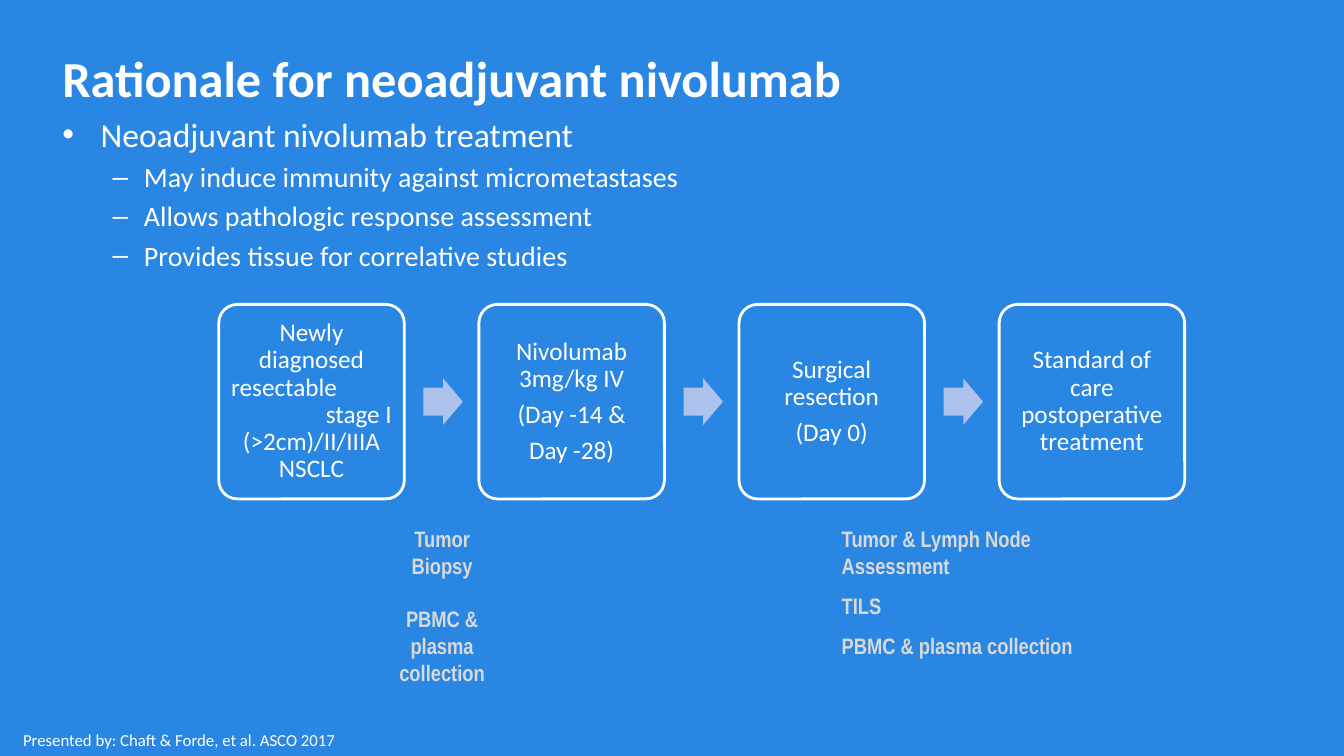
import pptx
import pptx.util
import pptx.dml.color
import pptx.enum.shapes
import pptx.enum.text
import pptx.oxml.ns
import lxml.etree

Inches = pptx.util.Inches
Pt = pptx.util.Pt
Align = pptx.enum.text.PP_ALIGN
Anchor = pptx.enum.text.MSO_ANCHOR
Kind = pptx.enum.shapes.MSO_SHAPE

HUES = {"blue": "2986E2", "white": "FFFFFF", "pale": "ADC3EE", "gray": "D9D9D9"}

LEFT = {"alignment": Align.LEFT}
MID = {"alignment": Align.CENTER}
STEP = {"alignment": Align.CENTER, "line_spacing": 0.9, "space_after": Pt(6.3)}
TIGHT = {**STEP, "space_after": Pt(0)}

HEAD = {"name": "Calibri", "size": Pt(36), "bold": True}
MAIN = {"name": "Calibri", "size": Pt(24)}
SUB = {"name": "Calibri", "size": Pt(20)}
CELL = {"name": "Calibri", "size": Pt(18)}
FOOT = {"name": "Calibri", "size": Pt(12)}
NOTE = {"name": "Arial Narrow", "size": Pt(16), "bold": True}

PLAIN = (0.1, 0.05)
SNUG = (0.07, 0.07)

TITLE = [("Rationale for neoadjuvant nivolumab", LEFT)]
POINTS = [
    ("Neoadjuvant nivolumab treatment", 0),
    ("May induce immunity against micrometastases", 1),
    ("Allows pathologic response assessment", 1),
    ("Provides tissue for correlative studies", 1),
]
LEVELS = [
    {"font": MAIN, "mark": "•", "indent": (0.38, -0.38), "gap": 0},
    {"font": SUB, "mark": "–", "indent": (0.81, -0.31), "gap": 4},
]
STEPS = [
    [
        ("Newly diagnosed", TIGHT),
        ("resectable", {**TIGHT, "alignment": Align.LEFT}),
        ("stage I", {**TIGHT, "alignment": Align.RIGHT}),
        ("(>2cm)/II/IIIA NSCLC", STEP),
    ],
    [("Nivolumab 3mg/kg IV", STEP), ("(Day -14 &", STEP), ("Day -28)", STEP)],
    [("Surgical resection", STEP), ("(Day 0)", STEP)],
    [("Standard of care postoperative treatment", STEP)],
]
NOTES = [
    (
        (3.68, 5.16, 1.41, 1.72),
        [
            ("Tumor\vBiopsy", MID),
            ("PBMC & plasma collection", {**MID, "space_before": Pt(19)}),
        ],
    ),
    (
        (8.25, 5.16, 2.5, 1.45),
        [
            ("Tumor & Lymph Node Assessment", LEFT),
            ("TILS", {**LEFT, "space_before": Pt(9.6)}),
            ("PBMC & plasma collection", {**LEFT, "space_before": Pt(9.6)}),
        ],
    ),
]
SOURCE = [("Presented by: Chaft & Forde, et al. ASCO 2017", LEFT)]

ROW = {"left": 2.17, "top": 3.02, "wide": 1.84, "high": 1.93, "pitch": 2.58}
ARROW = {"wide": 0.39, "high": 0.46, "gap": 0.19}


def tint(name):
    return pptx.dml.color.RGBColor.from_string(HUES[name])


def apply(item, style):
    for key, value in style.items():
        setattr(item, key, value)


def write(shape, lines, font, hue="white", pad=PLAIN, anchor=Anchor.TOP):
    frame = shape.text_frame
    side, edge = map(Inches, pad)
    apply(frame, {
        "word_wrap": True, "vertical_anchor": anchor,
        "margin_left": side, "margin_right": side,
        "margin_top": edge, "margin_bottom": edge,
    })
    for i, (text, style) in enumerate(lines):
        para = frame.add_paragraph() if i else frame.paragraphs[0]
        para.text = text
        apply(para, style)
        for run in para.runs:
            apply(run.font, font)
            run.font.color.rgb = tint(hue)
    return frame


def label(slide, place, lines, font, **more):
    box = slide.shapes.add_textbox(*map(Inches, place))
    return write(box, lines, font, **more)


def block(slide, kind, place, fill, bends):
    shape = slide.shapes.add_shape(kind, *map(Inches, place))
    shape.shadow.inherit = False
    shape.fill.solid()
    shape.fill.fore_color.rgb = tint(fill)
    for i, bend in enumerate(bends):
        shape.adjustments[i] = bend
    return shape


def bullet(para, level):
    props = para._p.get_or_add_pPr()
    for key, value in zip(("marL", "indent"), level["indent"]):
        props.set(key, str(Inches(value)))
    face = lxml.etree.SubElement(props, pptx.oxml.ns.qn("a:buFont"))
    face.set("typeface", "Arial")
    mark = lxml.etree.SubElement(props, pptx.oxml.ns.qn("a:buChar"))
    mark.set("char", level["mark"])
    para.space_before = Pt(level["gap"])
    for run in para.runs:
        apply(run.font, level["font"])


def flow(slide):
    for i, lines in enumerate(STEPS):
        left = ROW["left"] + i * ROW["pitch"]
        place = (left, ROW["top"], ROW["wide"], ROW["high"])
        box = block(slide, Kind.ROUNDED_RECTANGLE, place, "blue", [0.1])
        box.line.color.rgb = tint("white")
        box.line.width = Pt(2)
        write(box, lines, CELL, pad=SNUG, anchor=Anchor.MIDDLE)
        if i < len(STEPS) - 1:
            x = left + ROW["wide"] + ARROW["gap"]
            y = ROW["top"] + (ROW["high"] - ARROW["high"]) / 2
            place = (x, y, ARROW["wide"], ARROW["high"])
            arrow = block(slide, Kind.RIGHT_ARROW, place, "pale", [0.6, 0.5])
            arrow.line.fill.background()


def main():
    deck = pptx.Presentation()
    deck.slide_width = Inches(13.33)
    deck.slide_height = Inches(7.5)
    slide = deck.slides.add_slide(deck.slide_layouts[6])
    slide.background.fill.solid()
    slide.background.fill.fore_color.rgb = tint("blue")

    label(slide, (0.52, 0.39, 12.46, 0.75), TITLE, HEAD, anchor=Anchor.MIDDLE)
    lines = [(text, {**LEFT, "level": depth}) for text, depth in POINTS]
    frame = label(slide, (0.52, 1.08, 12.46, 1.8), lines, MAIN)
    for para in frame.paragraphs:
        bullet(para, LEVELS[para.level])
    flow(slide)
    for place, lines in NOTES:
        label(slide, place, lines, NOTE, hue="gray")
    label(slide, (0.13, 7.17, 4.25, 0.33), SOURCE, FOOT, anchor=Anchor.MIDDLE)
    deck.save("out.pptx")


if __name__ == "__main__":
    main()
